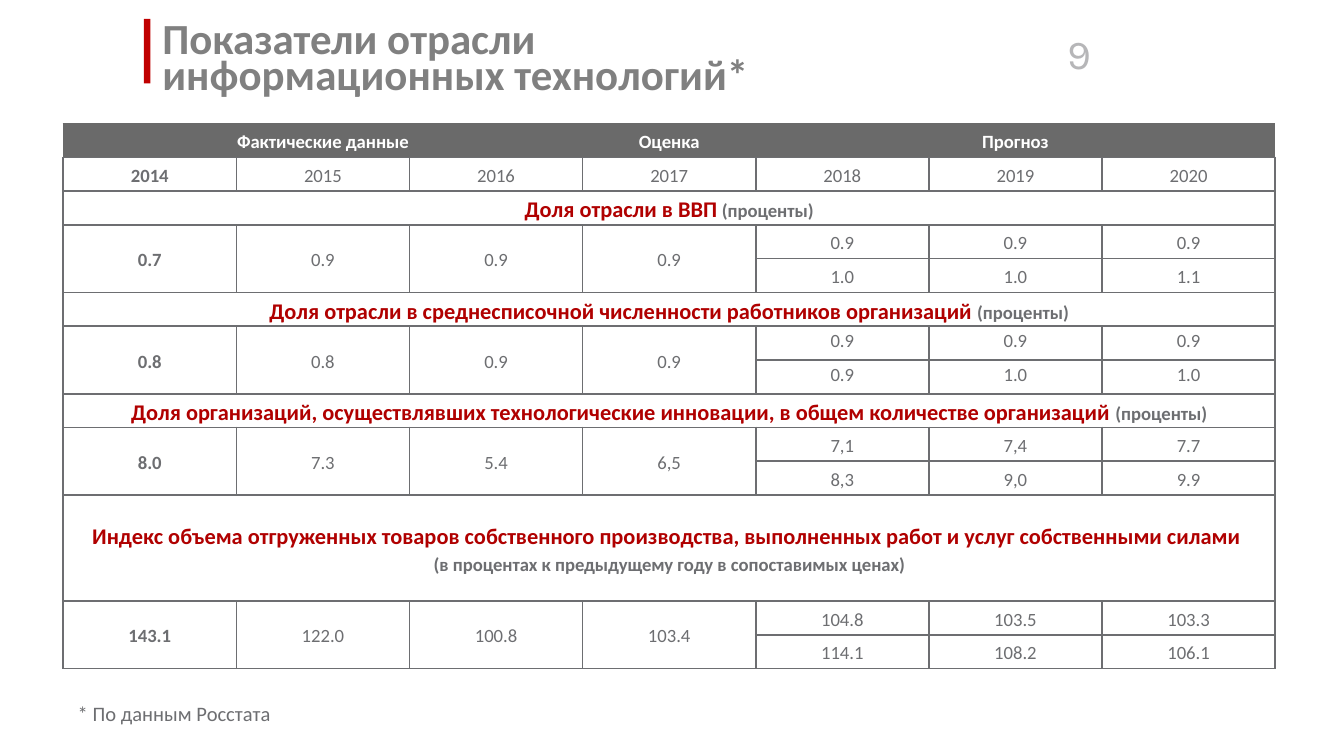
from pptx import Presentation
from pptx.util import Inches, Pt
from pptx.dml.color import RGBColor as RGB
from pptx.enum.shapes import MSO_SHAPE as SHAPE
from pptx.enum.text import MSO_ANCHOR as ANCHOR, PP_ALIGN as ALIGN
from pptx.oxml.ns import qn
from lxml.etree import SubElement
from dataclasses import dataclass, field


@dataclass
class Theme:
    bar: str = "C00000"
    header: str = "6A6A6A"
    line: str = "6D6E71"
    line_w: float = 1
    header_line_w: float = 0.75
    # style name: font, size, colour, bold
    styles: dict = field(default_factory=lambda: {
        "title": ("Calibri", 23, "808080", True),
        "number": ("Karla", 22, "B6B6B8", False),
        "header": ("Calibri", 10, "FFFFFF", True),
        "value": ("Calibri", 10, "6D6E71", False),
        "strong": ("Calibri", 10, "6D6E71", True),
        "section": ("Calibri", 12, "B00000", True),
        "note": ("Calibri", 11, "6D6E71", False),
    })


THEME = Theme()
SLIDE_W = 10
SLIDE_H = SLIDE_W * 9 / 16
COLS, TALL = 7, 0.79
FACTS = 4  # columns with one value; the others hold two variants

HEADINGS = [(0, 2, "Фактические данные"), (3, 3, "Оценка"), (4, 6, "Прогноз")]
YEARS = [str(year) for year in range(2014, 2021)]
# heading, unit, unit on its own line, facts, first and second variants
SECTIONS = [
    ("Доля отрасли в ВВП", "(проценты)", False,
     "0.7 0.9 0.9 0.9", "0.9 0.9 0.9", "1.0 1.0 1.1"),
    ("Доля отрасли в среднесписочной численности работников организаций",
     "(проценты)", False,
     "0.8 0.8 0.9 0.9", "0.9 0.9 0.9", "0.9 1.0 1.0"),
    ("Доля организаций, осуществлявших технологические инновации, "
     "в общем количестве организаций", "(проценты)", False,
     "8.0 7.3 5.4 6,5", "7,1 7,4 7.7", "8,3 9,0 9.9"),
    ("Индекс объема отгруженных товаров собственного производства, "
     "выполненных работ и услуг собственными силами",
     "(в процентах к предыдущему году в сопоставимых ценах)", True,
     "143.1 122.0 100.8 103.4", "104.8 103.5 103.3", "114.1 108.2 106.1"),
]
TOP_VALUES = 1  # section whose variants sit at the top of their cells


def set_all(target, values):
    for name, value in values.items():
        setattr(target, name, value)


def add_run(p, text, style):
    name, size, color, bold = THEME.styles[style]
    r = p.add_run()
    r.text = text
    set_all(r.font, {"name": name, "size": Pt(size), "bold": bold})
    r.font.color.rgb = RGB.from_string(color)


def add_text(s, box, lines, style, spacing=None, align=None, **frame):
    tf = s.shapes.add_textbox(*map(Inches, box)).text_frame
    set_all(tf, {"word_wrap": True, **frame})
    p = tf.paragraphs[0]
    set_all(p, {"line_spacing": spacing, "alignment": align})
    for i, line in enumerate(lines):
        if i:
            p.add_line_break()
        add_run(p, line, style)


def set_borders(cell, borders):
    """Borders are (color, width) by side letter; a missing side is not drawn."""
    tc_pr = cell._tc.get_or_add_tcPr()
    for side in "LRTB":
        color, width = borders.get(side, (None, 0))
        ln = SubElement(tc_pr, qn(f"a:ln{side}"), w=str(int(Pt(width))))
        if color:
            SubElement(SubElement(ln, qn("a:solidFill")), qn("a:srgbClr"), val=color)
        else:
            SubElement(ln, qn("a:noFill"))


def fill_cell(cell, *paragraphs, anchor=ANCHOR.MIDDLE):
    cell.vertical_anchor = anchor
    tf = cell.text_frame
    for i, runs in enumerate(paragraphs):
        p = tf.add_paragraph() if i else tf.paragraphs[0]
        set_all(p, {"alignment": ALIGN.CENTER, "line_spacing": 1.15})
        for text, style in runs:
            add_run(p, text, style)


def format_grid(table):
    body = (THEME.line, THEME.line_w)
    edge = (THEME.header, THEME.header_line_w)
    for i, row in enumerate(table.rows):
        for j, cell in enumerate(row.cells):
            set_all(cell, {"margin_left": Inches(0.02), "margin_right": Inches(0.02),
                           "margin_top": 0, "margin_bottom": 0})
            if i:
                set_borders(cell, dict.fromkeys("LRTB", body))
                cell.fill.background()
                continue
            borders = {"T": edge, "B": body}
            if j == 0:
                borders["L"] = edge
            if j == COLS - 1:
                borders["R"] = edge
            set_borders(cell, borders)
            cell.fill.solid()
            cell.fill.fore_color.rgb = RGB.from_string(THEME.header)


def value_style(col):
    return "value" if col else "strong"


def add_section(table, top, section, anchor):
    heading, unit, own_line, facts, *variants = section
    # Heading across the table
    cell = table.cell(top, 0)
    cell.merge(table.cell(top, COLS - 1))
    if own_line:
        fill_cell(cell, [(heading, "section"), (" ", "strong")], [(unit, "strong")])
    else:
        fill_cell(cell, [(heading, "section"), (" " + unit, "strong")])
    # Facts over two rows, then the two forecast variants
    for j, value in enumerate(facts.split()):
        cell = table.cell(top + 1, j)
        cell.merge(table.cell(top + 2, j))
        fill_cell(cell, [(value, value_style(j))])
    for i, variant in enumerate(variants, top + 1):
        for j, value in enumerate(variant.split(), FACTS):
            fill_cell(table.cell(i, j), [(value, "value")], anchor=anchor)


def add_indicators(s, box):
    n_rows = 2 + 3 * len(SECTIONS)
    table = s.shapes.add_table(n_rows, COLS, *map(Inches, box)).table
    set_all(table, {"first_row": False, "horz_banding": False})
    width, height = box[2:]
    for col in table.columns:
        col.width = Inches(width / COLS)
    for row in table.rows:
        row.height = Inches((height - TALL) / (n_rows - 1))
    table.rows[n_rows - 3].height = Inches(TALL)
    format_grid(table)
    # Header and years
    for first, last, text in HEADINGS:
        if last > first:
            table.cell(0, first).merge(table.cell(0, last))
        fill_cell(table.cell(0, first), [(text, "header")])
    for j, year in enumerate(YEARS):
        fill_cell(table.cell(1, j), [(year, value_style(j))])
    for k, section in enumerate(SECTIONS):
        anchor = ANCHOR.TOP if k == TOP_VALUES else ANCHOR.MIDDLE
        add_section(table, 2 + 3 * k, section, anchor)


def add_heading(s, box):
    x, y, w, h = box
    # Red bar
    sp = s.shapes.add_shape(SHAPE.RECTANGLE, *map(Inches, (x, y, 0.05, 0.48)))
    sp.shadow.inherit = False
    sp.fill.solid()
    sp.fill.fore_color.rgb = RGB.from_string(THEME.bar)
    sp.line.fill.background()
    # Page number
    add_text(s, (x + w - 0.59, y + 0.03, 0.59, 0.44), ["9"], "number",
             align=ALIGN.RIGHT, margin_left=Inches(0.07), margin_right=Inches(0.07),
             margin_top=Inches(0.04), margin_bottom=Inches(0.04))
    # Title
    add_text(s, (x + 0.04, y, 6.37, h),
             ["Показатели отрасли ", "информационных технологий*"], "title",
             spacing=0.7, vertical_anchor=ANCHOR.MIDDLE, margin_top=Inches(0.1))


def add_footnote(s, box):
    add_text(s, box, ["* По данным Росстата"], "note", word_wrap=False)


def main():
    prs = Presentation()
    set_all(prs, {"slide_width": Inches(SLIDE_W), "slide_height": Inches(SLIDE_H)})
    s = prs.slides.add_slide(prs.slide_layouts[6])
    add_heading(s, (1.07, 0.14, 7.12, 0.59))
    add_indicators(s, (0.47, 0.92, 9.02, 4.06))
    add_footnote(s, (0.48, 5.17, 1.65, 0.29))
    prs.save("out.pptx")


if __name__ == "__main__":
    main()
